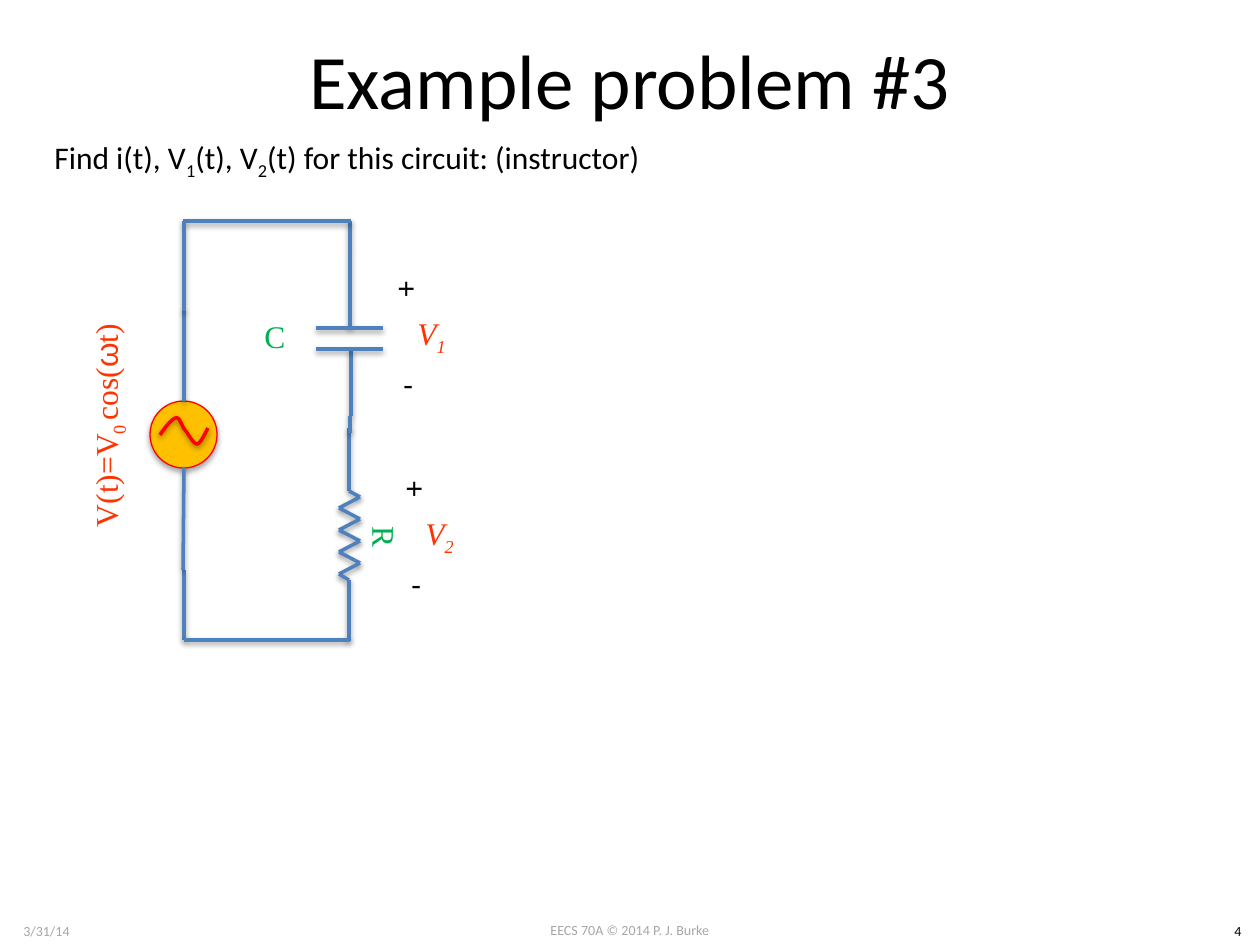
import lxml.etree
import pptx
import pptx.dml.color
import pptx.enum.shapes
import pptx.enum.text
import pptx.oxml
import pptx.oxml.ns
import pptx.util

PX = 914400 / 126
BLACK, GRAY, GREEN, ORANGE = "000000", "A6A6A6", "00B050", "FF3300"
BLUE, RED, AMBER = "4F81BD", "FF0000", "FFC000"
SERIF = "Times New Roman"
SHADOW = (
    '<a:effectLst xmlns:a="http://schemas.openxmlformats.org/drawingml/2006/main">'
    '<a:outerShdw blurRad="40000" dist="{dist}" dir="5400000" rotWithShape="0">'
    '<a:srgbClr val="000000"><a:alpha val="{alpha}"/></a:srgbClr>'
    "</a:outerShdw></a:effectLst>"
)


def emu(px):
    return round(px * PX)


def rgb(color):
    return pptx.dml.color.RGBColor.from_string(color)


def sub(text):
    return text, True, None


def bezier(start, controls, steps=12):
    points = []
    for first, second, end in controls:
        for step in range(1, steps + 1):
            t = step / steps
            weights = ((1 - t) ** 3, 3 * t * (1 - t) ** 2, 3 * t * t * (1 - t), t ** 3)
            corners = (start, first, second, end)
            points.append(tuple(sum(w * c[axis] for w, c in zip(weights, corners)) for axis in (0, 1)))
        start = end
    return points


class CircuitSlide:
    def __init__(self, slide):
        self.slide = slide
        self.shapes = slide.shapes

    def group(self):
        self.shapes = self.slide.shapes.add_group_shape().shapes

    def ungroup(self):
        self.shapes = self.slide.shapes

    def outline(self, shape, color, width, dist=20000, alpha=38000):
        shape.line.color.rgb = rgb(color)
        shape.line.width = pptx.util.Pt(width)
        properties = shape._element.spPr
        for effects in properties.findall(pptx.oxml.ns.qn("a:effectLst")):
            properties.remove(effects)
        properties.append(pptx.oxml.parse_xml(SHADOW.format(dist=dist, alpha=alpha)))

    def text(self, box, *runs, size=18, font="Calibri", color=BLACK, italic=False,
             center=True, middle=True, wrap=True, rotation=0):
        label = self.shapes.add_textbox(*map(emu, box))
        label.rotation = rotation
        frame = label.text_frame
        frame.word_wrap = wrap
        if middle:
            frame.vertical_anchor = pptx.enum.text.MSO_ANCHOR.MIDDLE
        else:
            frame.auto_size = pptx.enum.text.MSO_AUTO_SIZE.SHAPE_TO_FIT_TEXT
        paragraph = frame.paragraphs[0]
        align = pptx.enum.text.PP_ALIGN
        paragraph.alignment = align.CENTER if center else align.LEFT
        paragraph.font.size = pptx.util.Pt(size)
        paragraph.font.name = font
        paragraph.font.italic = italic
        paragraph.font.color.rgb = rgb(color)
        for entry in runs:
            words, lowered, own_font = (entry, False, None) if isinstance(entry, str) else entry
            run = paragraph.add_run()
            run.text = words
            if lowered:
                run.font._element.set("baseline", "-25000")
            if own_font:
                run.font.name = own_font

    def wire(self, *points):
        for start, end in zip(points, points[1:]):
            segment = self.shapes.add_connector(
                pptx.enum.shapes.MSO_CONNECTOR.STRAIGHT, *map(emu, start + end))
            self.outline(segment, BLUE, 2)

    def circle(self, box, fill, line):
        disc = self.shapes.add_shape(pptx.enum.shapes.MSO_SHAPE.OVAL, *map(emu, box))
        disc.fill.solid()
        disc.fill.fore_color.rgb = rgb(fill)
        self.outline(disc, line, 0.75, 23000, 35000)

    def curve(self, start, controls, color):
        builder = self.shapes.build_freeform(emu(start[0]), emu(start[1]), scale=1.0)
        points = [(emu(x), emu(y)) for x, y in bezier(start, controls)]
        builder.add_line_segments(points, close=False)
        wave = builder.convert_to_shape()
        wave.fill.background()
        self.outline(wave, color, 2)

    def voltage(self, left, top, index):
        sign = dict(center=False, middle=False, wrap=False)
        self.text((left + 5, top - 32, 42, 50), "+", rotation=90, **sign)
        self.text((left + 8, top + 62, 35, 50), "-", **sign)
        self.text((left, top, 97, 77), "V", sub(index), font=SERIF, color=ORANGE, italic=True)


def main():
    deck = pptx.Presentation()
    deck.slide_width, deck.slide_height = pptx.util.Inches(10), pptx.util.Inches(7.5)
    page = CircuitSlide(deck.slides.add_slide(deck.slide_layouts[6]))

    page.text((483, 915, 294, 30), "EECS 70A © 2014 P. J. Burke", size=8, color=GRAY, middle=False)
    page.text((0, 916, 93, 30), "3/31/14", size=8, color=GRAY, middle=False)
    page.text((1216, 916, 44, 30), "4", size=8, middle=False)
    page.text((63, 0, 1134, 158), "Example problem #3", size=44)
    page.text((42, 132, 776, 50), "Find i(t), V", sub("1"), "(t), V", sub("2"),
              "(t) for this circuit: (instructor)", center=False, middle=False)

    page.group()
    page.text((310, 491, 150, 92), "R", font=SERIF, color=GREEN, rotation=90)
    zigzag = [(339 if turn % 2 else 360, 497 + 11 * turn) for turn in range(8)]
    page.wire((349, 428), (349, 491), *zigzag, (349, 580), (349, 641))

    page.ungroup()
    page.wire((184, 570), (184, 640), (350, 640))

    page.group()
    page.wire((350, 221), (350, 249), (350, 328))
    page.wire((351, 349), (351, 416))
    page.wire((350, 416), (350, 433))
    page.text((200, 290, 150, 92), "C", font=SERIF, color=GREEN)
    for plate in (328, 349):
        page.wire((383, plate), (316, plate))
    page.voltage(383, 297, "1")

    page.ungroup()
    page.text((-25, 387, 266, 77), "V(t)=V", sub("0 "), "cos(", ("ω", False, "Arial"), "t)",
              font=SERIF, color=ORANGE, rotation=270)
    page.voltage(391, 497, "2")

    page.group()
    page.circle((150, 401, 67, 67), AMBER, RED)
    page.curve((160, 435), [
        ((166, 426), (173, 418), (176, 418)),
        ((180, 417), (181, 425), (185, 430)),
        ((188, 433), (193, 444), (197, 444)),
        ((200, 444), (204, 436), (208, 428)),
    ], RED)
    page.wire((183, 570), (184, 467))
    page.wire((184, 401), (184, 309))

    page.ungroup()
    page.wire((351, 221), (183, 221))
    page.wire((184, 311), (184, 221))

    deck.save("out.pptx")


if __name__ == "__main__":
    main()
